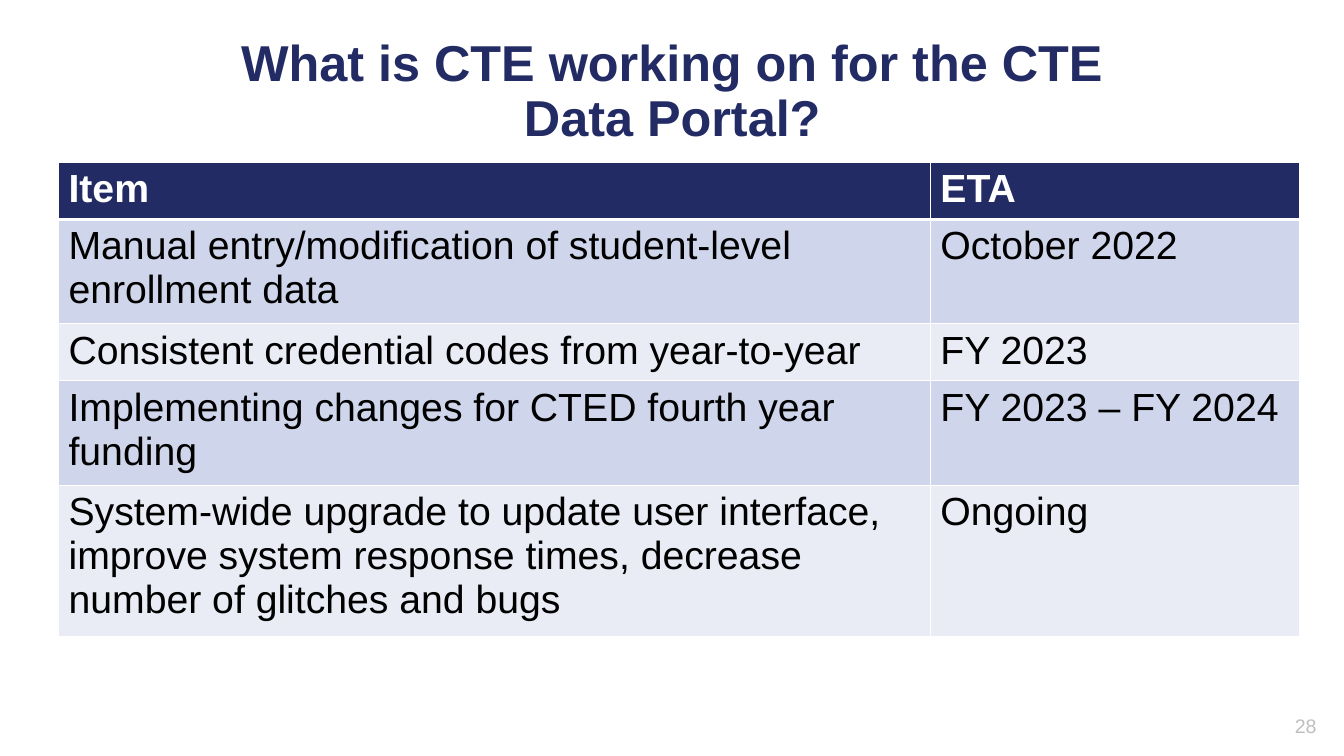
"""Build the slide on upcoming work for the CTE Data Portal."""
import pptx
import pptx.dml.color
import pptx.enum.text
import pptx.oxml
import pptx.oxml.ns
import pptx.util
from lxml import etree

Pt = pptx.util.Pt
RGBColor = pptx.dml.color.RGBColor
Align = pptx.enum.text.PP_ALIGN
Anchor = pptx.enum.text.MSO_ANCHOR
qn = pptx.oxml.ns.qn

NAVY = RGBColor(0x23, 0x2B, 0x64)
WHITE = RGBColor(0xFF, 0xFF, 0xFF)
BLACK = RGBColor(0, 0, 0)
GREY = RGBColor(0x80, 0x80, 0x80)
BAND_DARK = RGBColor(0xCF, 0xD5, 0xEA)
BAND_LIGHT = RGBColor(0xE9, 0xEB, 0xF5)

WORK_ITEMS = [
    ("Item", "ETA"),
    ("Manual entry/modification of student-level enrollment data", "October 2022"),
    ("Consistent credential codes from year-to-year", "FY 2023"),
    ("Implementing changes for CTED fourth year funding", "FY 2023 – FY 2024"),
    ("System-wide upgrade to update user interface, improve system response times, "
     "decrease number of glitches and bugs", "Ongoing"),
]


def write(frame, text, *, size, color, font="Arial", bold=False, align=Align.LEFT,
          spacing=1.0, alpha=None):
    paragraph = frame.paragraphs[0]
    paragraph.alignment = align
    paragraph.line_spacing = spacing
    run = paragraph.add_run()
    run.text = text
    run.font.name = font
    run.font.size = Pt(size)
    run.font.bold = bold
    run.font.color.rgb = color
    if alpha is not None:
        tint = run.font.fill._xPr.find(".//" + qn("a:srgbClr"))
        etree.SubElement(tint, qn("a:alpha"), val=str(alpha * 1000))


class PortalSlide:
    def __init__(self, slide):
        self.slide = slide
        self.font = "Arial"

    def text(self, content, left, top, width, height, anchor=Anchor.TOP, **style):
        box = self.slide.shapes.add_textbox(Pt(left), Pt(top), Pt(width), Pt(height))
        box.text_frame.word_wrap = True
        box.text_frame.vertical_anchor = anchor
        write(box.text_frame, content, font=self.font, **style)

    def border(self, cell, side, weight):
        line = etree.SubElement(cell._tc.get_or_add_tcPr(), qn(f"a:ln{side}"),
                                w=str(Pt(weight)))
        fill = etree.SubElement(line, qn("a:solidFill"))
        etree.SubElement(fill, qn("a:srgbClr"), val=str(WHITE))

    def table(self, rows, left, top, widths, row_height):
        grid = self.slide.shapes.add_table(
            len(rows), len(widths), Pt(left), Pt(top),
            Pt(sum(widths)), Pt(row_height * len(rows))).table
        for column, width in zip(grid.columns, widths):
            column.width = Pt(width)
        for index, row in enumerate(rows):
            grid.rows[index].height = Pt(row_height)
            header = index == 0
            band = NAVY if header else (BAND_LIGHT, BAND_DARK)[index % 2]
            for column, content in enumerate(row):
                cell = grid.cell(index, column)
                for side in "LRTB":
                    thick = (index, side) in ((0, "B"), (1, "T"))
                    self.border(cell, side, 3 if thick else 1)
                cell.fill.solid()
                cell.fill.fore_color.rgb = band
                write(cell.text_frame, content, font=self.font, size=28,
                      bold=header, color=WHITE if header else BLACK)


def main():
    deck = pptx.Presentation()
    deck.slide_width, deck.slide_height = Pt(960), Pt(540)
    portal = PortalSlide(deck.slides.add_slide(deck.slide_layouts[6]))
    portal.text("28", 912.2, 504, 41, 28.8, anchor=Anchor.MIDDLE,
                size=14, color=GREY, align=Align.CENTER, alpha=50)
    portal.text("What is CTE working on for the CTE Data Portal?",
                132.5, 23.8, 695.5, 45.4, size=36, color=NAVY, bold=True,
                align=Align.CENTER, spacing=0.9)
    portal.table(WORK_ITEMS, 41.8, 115.9, (622.8, 263.5), 29.5)
    deck.save("out.pptx")


if __name__ == "__main__":
    main()
